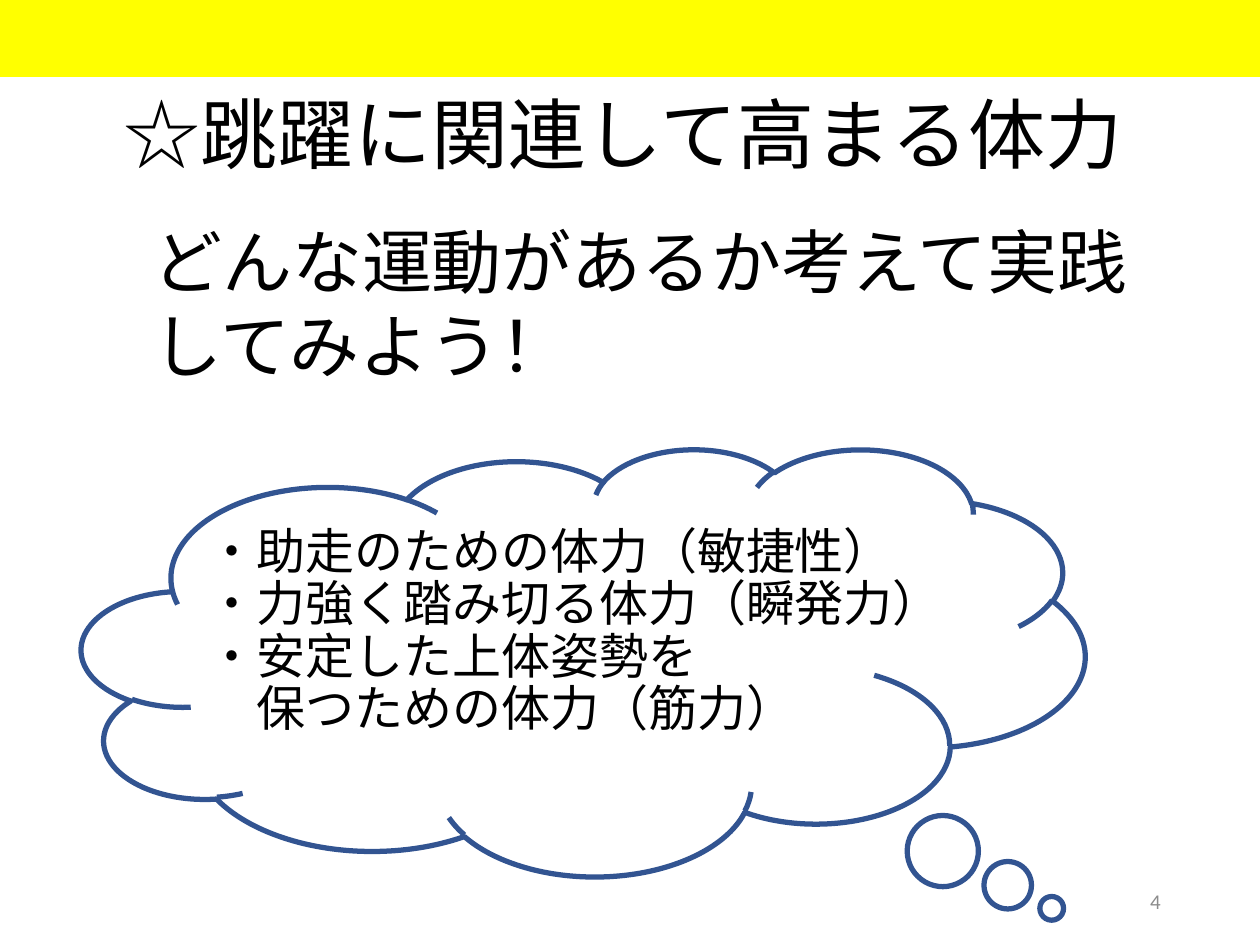
"""Build a slide on the physical fitness developed through jumping."""

from dataclasses import dataclass

from lxml.etree import SubElement
from pptx import Presentation
from pptx.dml.color import RGBColor
from pptx.enum.shapes import MSO_SHAPE
from pptx.enum.text import MSO_ANCHOR, MSO_AUTO_SIZE, PP_ALIGN
from pptx.oxml.ns import qn
from pptx.shapes.autoshape import Shape
from pptx.slide import Slide
from pptx.util import Cm, Pt


@dataclass(frozen=True)
class Theme:
    font: str = "Noto Sans CJK JP"
    number_font: str = "Calibri"
    text: RGBColor = RGBColor(0x00, 0x00, 0x00)
    muted: RGBColor = RGBColor(0x8C, 0x8C, 0x8C)
    bar: RGBColor = RGBColor(0xFF, 0xFF, 0x00)
    outline: RGBColor = RGBColor(0x32, 0x54, 0x91)
    outline_width: float = 3
    title: float = 44
    question: float = 40
    item: float = 28
    item_leading: float = 30
    number: float = 12


@dataclass(frozen=True)
class Box:
    left: float
    top: float
    width: float
    height: float

    def lengths(self) -> tuple[Cm, Cm, Cm, Cm]:
        return Cm(self.left), Cm(self.top), Cm(self.width), Cm(self.height)


@dataclass(frozen=True)
class Line:
    text: str
    indent: float = 0


@dataclass(frozen=True)
class TextBlock:
    box: Box
    lines: tuple[Line, ...]
    size: float
    font: str
    color: RGBColor
    leading: float | None = None
    align: PP_ALIGN = PP_ALIGN.LEFT
    anchor: MSO_ANCHOR = MSO_ANCHOR.TOP
    fit: MSO_AUTO_SIZE = MSO_AUTO_SIZE.SHAPE_TO_FIT_TEXT


THEME = Theme()
BAR = Box(-0.05, 0, 25.45, 1.55)
CLOUD = Box(1.65, 9.04, 20.22, 8.61)
CLOUD_TAIL = (0.467, 0.577)

NUMBER = TextBlock(
    Box(17.93, 17.65, 5.72, 1.02), (Line("4"),), THEME.number, THEME.number_font,
    THEME.muted, align=PP_ALIGN.RIGHT, anchor=MSO_ANCHOR.MIDDLE, fit=MSO_AUTO_SIZE.NONE,
)
QUESTION = TextBlock(
    Box(2.82, 4.29, 21.18, 3.68), (Line("どんな運動があるか考えて実践してみよう！"),),
    THEME.question, THEME.font, THEME.text,
)
ITEMS = TextBlock(
    Box(3.94, 10.49, 15.62, 4.52),
    (
        Line("・助走のための体力（敏捷性）"),
        Line("・力強く踏み切る体力（瞬発力）"),
        Line("・安定した上体姿勢を"),
        Line("保つための体力（筋力）", indent=THEME.item),
    ),
    THEME.item, THEME.font, THEME.text, leading=THEME.item_leading,
)
TITLE = TextBlock(
    Box(2.24, 1.63, 20.9, 2.13), (Line("☆跳躍に関連して高まる体力"),),
    THEME.title, THEME.font, THEME.text,
)


def add_text(s: Slide, block: TextBlock) -> None:
    tf = s.shapes.add_textbox(*block.box.lengths()).text_frame
    tf.word_wrap = True
    tf.auto_size = block.fit
    tf.vertical_anchor = block.anchor
    for i, line in enumerate(block.lines):
        p = tf.add_paragraph() if i else tf.paragraphs[0]
        p.text = line.text
        p.alignment = block.align
        if block.leading:
            p.line_spacing = Pt(block.leading)
        p.font.size = Pt(block.size)
        p.font.color.rgb = block.color
        p.font.name = block.font
        pPr = p._p.get_or_add_pPr()
        SubElement(pPr.find(qn("a:defRPr")), qn("a:ea"), typeface=block.font)
        if line.indent:
            pPr.set("marL", str(Pt(line.indent)))
            pPr.set("indent", "0")


def add_plain_shape(s: Slide, kind: MSO_SHAPE, box: Box) -> Shape:
    sp = s.shapes.add_shape(kind, *box.lengths())
    sp.shadow.inherit = False
    return sp


def add_bar(s: Slide) -> None:
    sp = add_plain_shape(s, MSO_SHAPE.RECTANGLE, BAR)
    sp.fill.solid()
    sp.fill.fore_color.rgb = THEME.bar
    sp.line.fill.background()


def add_cloud(s: Slide) -> None:
    sp = add_plain_shape(s, MSO_SHAPE.CLOUD_CALLOUT, CLOUD)
    sp.fill.background()
    sp.line.color.rgb = THEME.outline
    sp.line.width = Pt(THEME.outline_width)
    for i, value in enumerate(CLOUD_TAIL):
        sp.adjustments[i] = value


def main() -> None:
    prs = Presentation()
    prs.slide_width, prs.slide_height = Cm(25.4), Cm(19.05)
    s = prs.slides.add_slide(prs.slide_layouts[6])
    add_bar(s)
    for block in (NUMBER, QUESTION, ITEMS):
        add_text(s, block)
    add_cloud(s)
    add_text(s, TITLE)
    prs.save("out.pptx")


if __name__ == "__main__":
    main()
